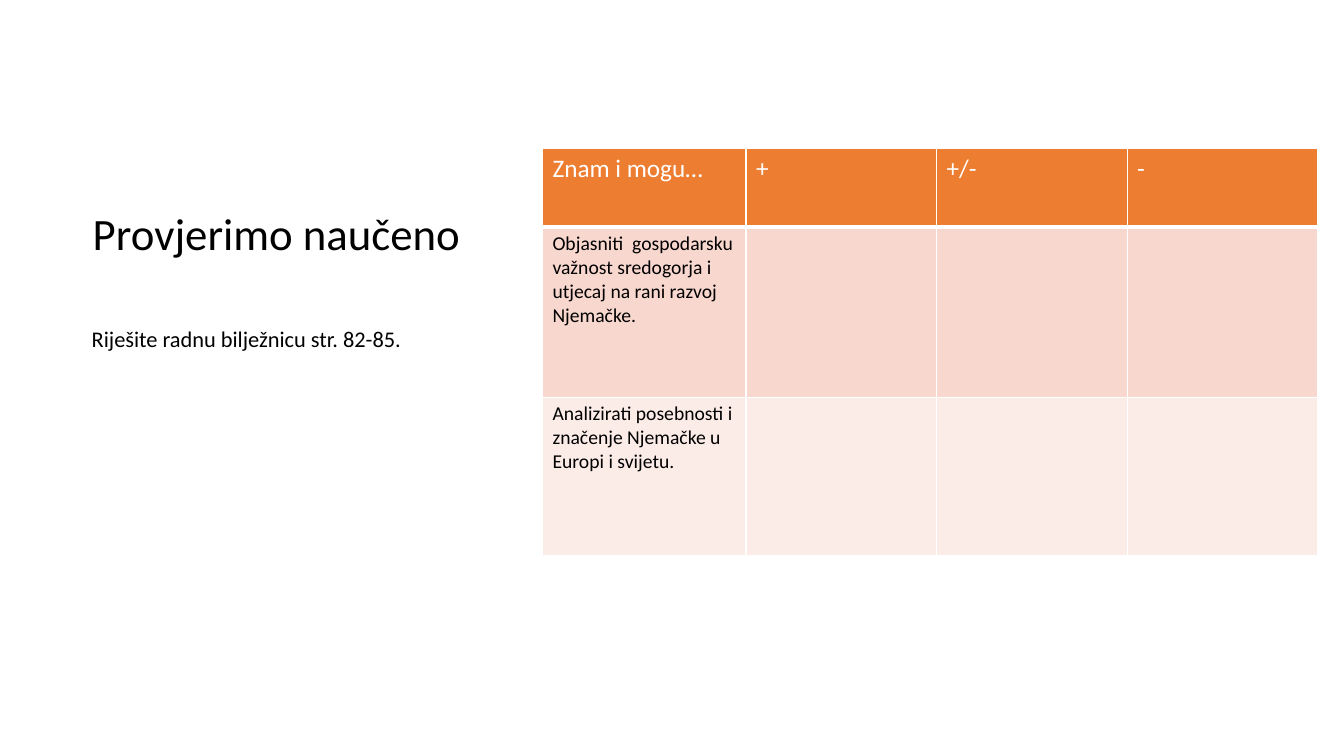
from lxml import etree
from pptx import Presentation
from pptx.dml.color import RGBColor
from pptx.oxml.ns import qn
from pptx.util import Inches, Pt

FONT = "Calibri"
BLACK = RGBColor(0x00, 0x00, 0x00)
WHITE = RGBColor(0xFF, 0xFF, 0xFF)
ORANGE = RGBColor(0xED, 0x7D, 0x31)
ROSE = RGBColor(0xF8, 0xD7, 0xCE)
PALE_ROSE = RGBColor(0xFC, 0xEC, 0xE8)

COLUMN_WIDTHS = [2.02, 1.89, 1.89, 1.89]
# Row height, fill, text colour, text size, cell texts
ROWS = [
    (0.78, ORANGE, WHITE, 18, ["Znam i mogu…", "+", "+/-", "-"]),
    (1.69, ROSE, BLACK, 14,
     ["Objasniti  gospodarsku važnost sredogorja i utjecaj na rani razvoj Njemačke.",
      "", "", ""]),
    (1.57, PALE_ROSE, BLACK, 14,
     ["Analizirati posebnosti i značenje Njemačke u Europi i svijetu.", "", "", ""]),
]


def style_font(font, size, color):
    font.name = FONT
    font.size = Pt(size)
    font.color.rgb = color


def add_text(page, left, top, width, height, text, size):
    box = page.shapes.add_textbox(Inches(left), Inches(top), Inches(width), Inches(height))
    frame = box.text_frame
    frame.word_wrap = True
    frame.margin_left = frame.margin_top = frame.margin_right = frame.margin_bottom = 0
    frame.text = text
    para = frame.paragraphs[0]
    para.line_spacing = 0.9
    style_font(para.runs[0].font, size, BLACK)


def set_borders(cell, bottom_width):
    properties = cell._tc.get_or_add_tcPr()
    widths = {"a:lnL": 1, "a:lnR": 1, "a:lnT": 1, "a:lnB": bottom_width}
    for position, (tag, width) in enumerate(widths.items()):
        line = etree.Element(qn(tag), w=str(Pt(width)))
        fill = etree.SubElement(line, qn("a:solidFill"))
        etree.SubElement(fill, qn("a:srgbClr"), val=str(WHITE))
        properties.insert(position, line)


def add_checklist(page, left, top):
    height = sum(row[0] for row in ROWS)
    table = page.shapes.add_table(
        len(ROWS), len(COLUMN_WIDTHS), Inches(left), Inches(top),
        Inches(sum(COLUMN_WIDTHS)), Inches(height)).table
    for column, width in zip(table.columns, COLUMN_WIDTHS):
        column.width = Inches(width)
    for row, (row_height, fill, color, size, texts) in zip(table.rows, ROWS):
        row.height = Inches(row_height)
        for cell, text in zip(row.cells, texts):
            cell.fill.solid()
            cell.fill.fore_color.rgb = fill
            set_borders(cell, 3 if fill == ORANGE else 1)
            cell.text = text
            para = cell.text_frame.paragraphs[0]
            style_font(para.font, size, color)
            for span in para.runs:
                style_font(span.font, size, color)
                span.font.bold = False


def main():
    deck = Presentation()
    deck.slide_width = Inches(13.33)
    deck.slide_height = Inches(7.5)
    page = deck.slides.add_slide(deck.slide_layouts[6])

    # Title and task
    add_text(page, 0.92, 2.1, 4.3, 1, "Provjerimo naučeno", 32)
    add_text(page, 0.91, 3.26, 4.3, 2.24, "Riješite radnu bilježnicu str. 82-85.", 16)

    # Self-assessment table
    add_checklist(page, 5.38, 1.47)

    deck.save("out.pptx")


if __name__ == "__main__":
    main()
